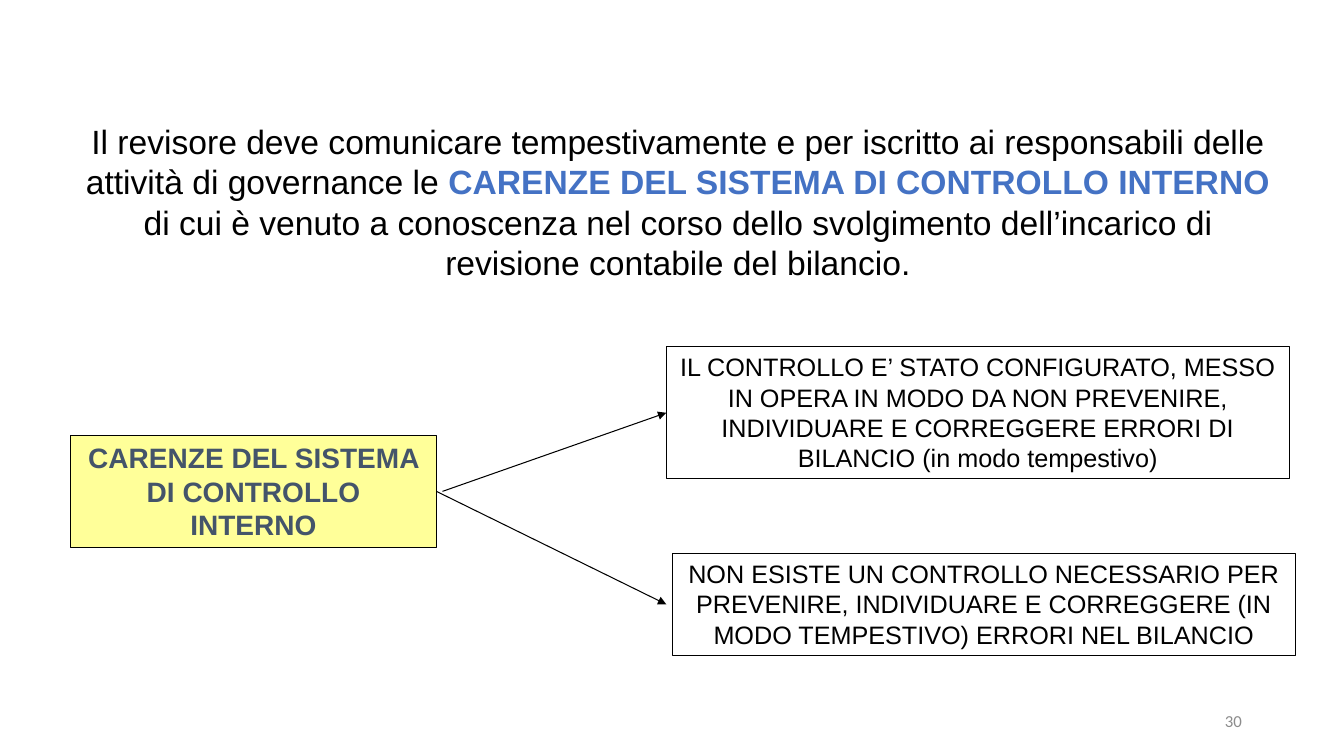
import pptx
import pptx.util
import pptx.dml.color
import pptx.enum.shapes
import pptx.enum.text
import pptx.oxml
import pptx.oxml.ns

COLORS = {
    "black": "000000",
    "accent": "4472C4",
    "slate": "44546A",
    "yellow": "FFFF99",
    "gray": "8C8C8C",
}
COLS, ROWS = 160, 90
ALIGN = pptx.enum.text.PP_ALIGN
ANCHOR = pptx.enum.text.MSO_ANCHOR

prs = pptx.Presentation()
prs.slide_width = pptx.util.Inches(13.33)
prs.slide_height = pptx.util.Inches(7.5)


def color(name):
    return pptx.dml.color.RGBColor.from_string(COLORS[name])


def grid(*values):
    sizes = (prs.slide_width / COLS, prs.slide_height / ROWS)
    return [round(v * sizes[i % 2]) for i, v in enumerate(values)]


def write(sp, *runs, size=18, font="Arial", fill="black", bold=False,
          align=ALIGN.CENTER, anchor=ANCHOR.TOP):
    tf = sp.text_frame
    tf.word_wrap = True
    tf.vertical_anchor = anchor
    p = tf.paragraphs[0]
    p.alignment = align
    for text, style in runs:
        r = p.add_run()
        r.text = text
        r.font.name = font
        r.font.size = pptx.util.Pt(size)
        r.font.bold = style.get("bold", bold)
        r.font.color.rgb = color(style.get("fill", fill))


def add_box(s, box, text, fill=None, **style):
    sp = s.shapes.add_shape(pptx.enum.shapes.MSO_SHAPE.RECTANGLE, *grid(*box))
    sp.shadow.inherit = False
    if fill:
        sp.fill.solid()
        sp.fill.fore_color.rgb = color(fill)
    else:
        sp.fill.background()
    sp.line.color.rgb = color("black")
    sp.line.width = pptx.util.Pt(0.75)
    write(sp, (text, {}), **style)
    return sp


def add_arrow(s, start, end):
    cx = s.shapes.add_connector(
        pptx.enum.shapes.MSO_CONNECTOR.STRAIGHT, *grid(*start, *end))
    cx.line.color.rgb = color("black")
    cx.line.width = pptx.util.Pt(0.75)
    ns = pptx.oxml.ns.nsdecls("a")
    cx.line._get_or_add_ln().append(
        pptx.oxml.parse_xml(f'<a:tailEnd {ns} type="triangle"/>'))
    cx._element.spPr.append(pptx.oxml.parse_xml(f"<a:effectLst {ns}/>"))
    return cx


def add_statement(s, box):
    write(s.shapes.add_textbox(*grid(*box)),
          ("Il revisore deve comunicare tempestivamente e per iscritto ai "
           "responsabili delle attività di governance le ", {}),
          ("CARENZE DEL SISTEMA DI CONTROLLO INTERNO",
           {"fill": "accent", "bold": True}),
          (" di cui è venuto a conoscenza nel corso dello svolgimento "
           "dell’incarico di revisione contabile del bilancio.", {}),
          size=24)


def add_diagram(s, box):
    x, y, w, h = box
    case_w, upper_h, lower_h = 74.16, 15.72, 12.12
    cause_w, cause_h = 43.56, 13.32
    upper_x = x + w - case_w - 0.72
    cause_y = y + 10.56
    cause = add_box(s, (x, cause_y, cause_w, cause_h),
                    "CARENZE DEL SISTEMA DI CONTROLLO INTERNO",
                    fill="yellow", size=20, bold=True)
    for r in cause.text_frame.paragraphs[0].runs:
        r.font.color.rgb = color("slate")
    upper = add_box(s, (upper_x, y, case_w, upper_h),
                    "IL CONTROLLO E’ STATO CONFIGURATO, MESSO IN OPERA IN MODO "
                    "DA NON PREVENIRE, INDIVIDUARE E CORREGGERE ERRORI DI "
                    "BILANCIO (in modo tempestivo)")
    add_box(s, (x + w - case_w, y + h - lower_h, case_w, lower_h),
            "NON ESISTE UN CONTROLLO NECESSARIO PER PREVENIRE, INDIVIDUARE E "
            "CORREGGERE (IN MODO TEMPESTIVO) ERRORI NEL BILANCIO")
    middle = cause_y + cause_h / 2
    rising = add_arrow(s, (x + cause_w + 0.72, middle),
                       (upper_x, y + upper_h / 2))
    rising.end_connect(upper, 1)
    falling = add_arrow(s, (x + cause_w, middle),
                        (upper_x, y + h - lower_h / 2))
    falling.begin_connect(cause, 3)


def add_page_number(s, box):
    write(s.shapes.add_textbox(*grid(*box)), ("30", {}), size=12,
          font="Calibri", fill="gray", align=ALIGN.RIGHT, anchor=ANCHOR.MIDDLE)


def main():
    s = prs.slides.add_slide(prs.slide_layouts[6])
    add_statement(s, (8.4, 13.8, 144.6, 20.4))
    add_diagram(s, (8.4, 41.28, 145.8, 36.72))
    add_page_number(s, (113.04, 83.4, 36, 4.8))
    prs.save("out.pptx")


if __name__ == "__main__":
    main()
